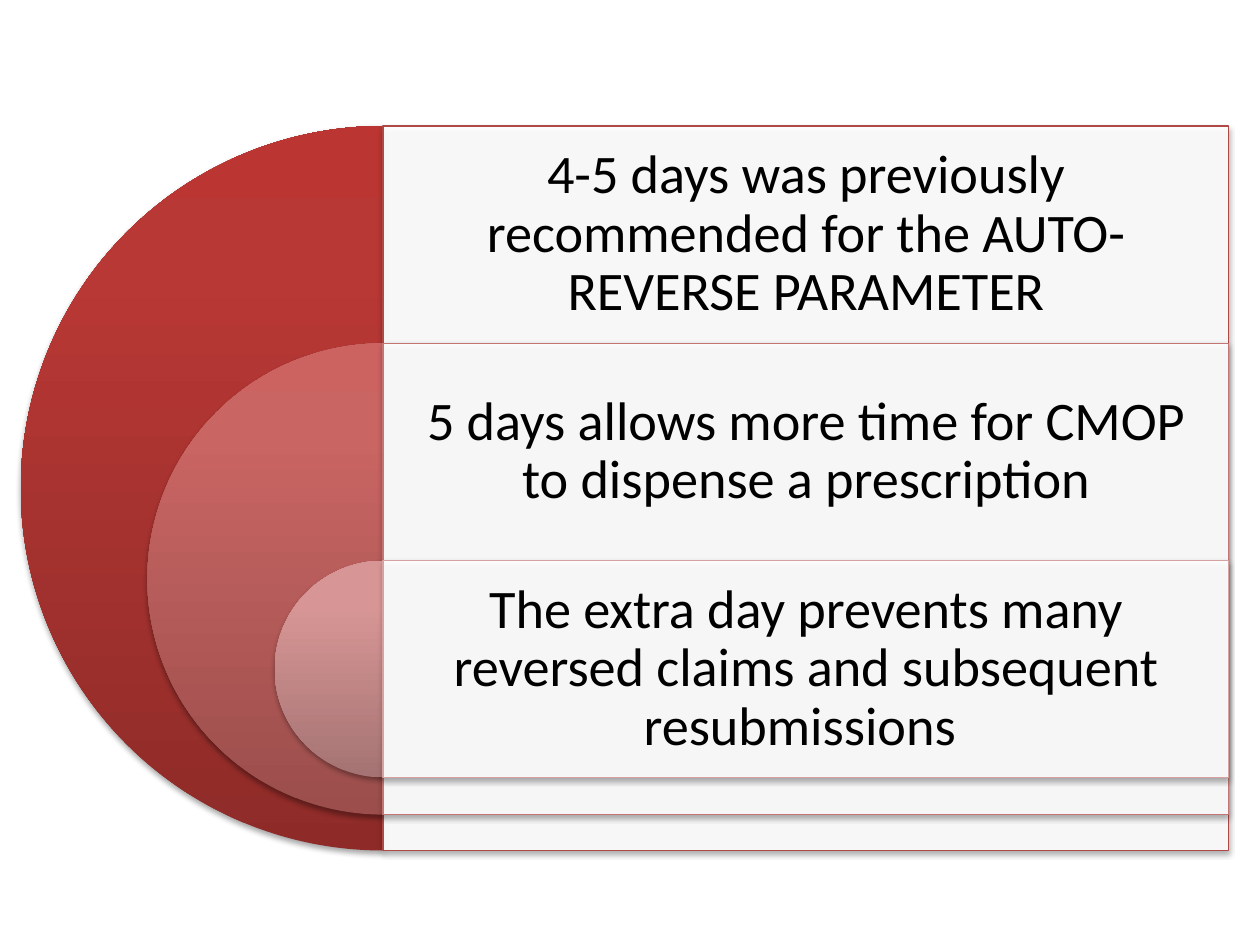
"""Build a slide of three nested half circles with a text panel for each."""
from copy import deepcopy
from lxml.etree import SubElement
from pptx import Presentation
from pptx.dml.color import RGBColor
from pptx.enum.shapes import MSO_SHAPE
from pptx.enum.text import MSO_ANCHOR, PP_ALIGN
from pptx.oxml.ns import qn
from pptx.util import Inches, Pt

WHITE = RGBColor(0xFF, 0xFF, 0xFF)
BLACK = RGBColor(0x00, 0x00, 0x00)
DARK = [RGBColor(0x8E, 0x2B, 0x28), RGBColor(0xB8, 0x38, 0x35), RGBColor(0xBB, 0x36, 0x32)]
MID = [RGBColor(0x9B, 0x4E, 0x4C), RGBColor(0xC9, 0x65, 0x63), RGBColor(0xCC, 0x63, 0x61)]
PALE = [RGBColor(0xA5, 0x73, 0x73), RGBColor(0xD7, 0x96, 0x95), RGBColor(0xD9, 0x95, 0x94)]
EDGES = [RGBColor(0xAE, 0x49, 0x46), RGBColor(0xC4, 0x74, 0x72), RGBColor(0xD6, 0xA2, 0xA1)]

LEFT, TOP, WIDTH, STEP = 3.04, 1, 6.71, 1.725
STOPS = [0, 0.8, 1]
ROWS = [
    (5.75, DARK, "4-5 days was previously recommended for the AUTO-REVERSE PARAMETER"),
    (3.74, MID, "5 days allows more time for CMOP to dispense a prescription"),
    (1.72, PALE, "The extra day prevents many reversed claims and subsequent resubmissions "),
]


def add_shade(shape):
    shape.shadow.inherit = False
    effects = shape._element.spPr.find(qn("a:effectLst"))
    shade = SubElement(effects, qn("a:outerShdw"), blurRad=str(Pt(3.1)),
                       dist=str(Pt(1.8)), dir="5400000", rotWithShape="0")
    color = SubElement(shade, qn("a:srgbClr"), val=str(BLACK))
    SubElement(color, qn("a:alpha"), val="35000")


deck = Presentation()
deck.slide_width, deck.slide_height = Inches(10), Inches(7.5)
slide = deck.slides.add_slide(deck.slide_layouts[6])
shapes = slide.shapes

for row, ((size, tones, words), edge) in enumerate(zip(ROWS, EDGES)):
    top = TOP + row * STEP

    pie = shapes.add_shape(MSO_SHAPE.PIE, Inches(LEFT - size / 2), Inches(top),
                           Inches(size), Inches(size))
    pie.adjustments[0], pie.adjustments[1] = 54, 162
    pie.line.fill.background()
    pie.fill.gradient()
    pie.fill.gradient_angle = 90
    stops = pie._element.spPr.find(qn("a:gradFill")).find(qn("a:gsLst"))
    stops.append(deepcopy(stops[-1]))
    for stop, place, tone in zip(pie.fill.gradient_stops, STOPS, tones):
        stop.position = place
        stop.color.rgb = tone
    add_shade(pie)

    panel = shapes.add_shape(MSO_SHAPE.RECTANGLE, Inches(LEFT), Inches(top),
                             Inches(WIDTH), Inches(size))
    panel.fill.solid()
    panel.fill.fore_color.rgb = WHITE
    color = panel._element.spPr.find(qn("a:solidFill")).find(qn("a:srgbClr"))
    SubElement(color, qn("a:alpha"), val="90000")
    panel.line.color.rgb = edge
    panel.line.width = Pt(0.75)
    add_shade(panel)

    label = shapes.add_textbox(Inches(LEFT), Inches(top), Inches(WIDTH), Inches(STEP))
    frame = label.text_frame
    frame.word_wrap = True
    frame.vertical_anchor = MSO_ANCHOR.MIDDLE
    frame.margin_left = frame.margin_right = Inches(0.13)
    frame.margin_top = frame.margin_bottom = Inches(0.13)
    text = frame.paragraphs[0]
    text.text = words
    text.alignment = PP_ALIGN.CENTER
    text.line_spacing = 0.9
    text.font.name = "Calibri"
    text.font.size = Pt(31)
    text.font.color.rgb = BLACK

deck.save("out.pptx")
